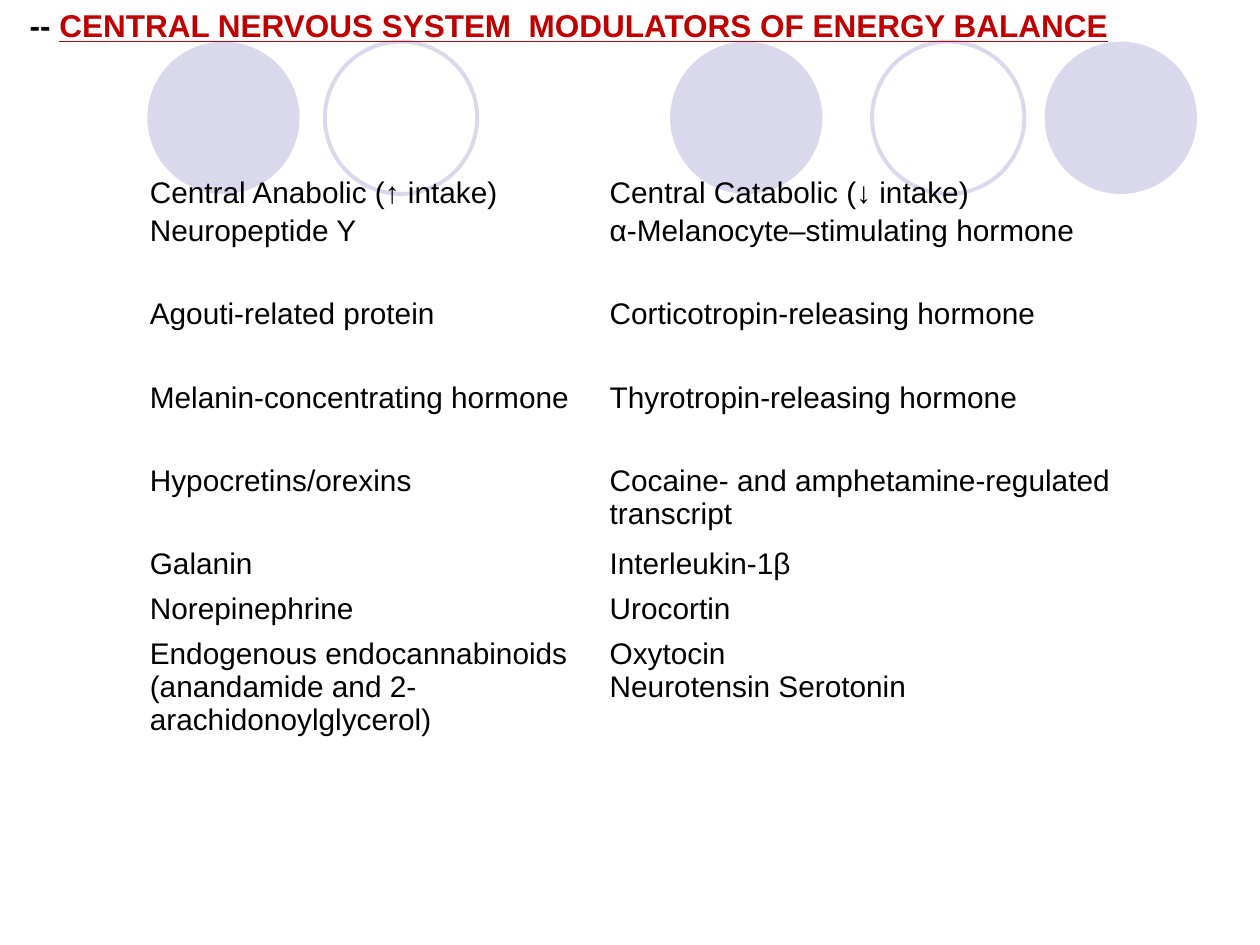
from dataclasses import dataclass

from pptx import Presentation
from pptx.dml.color import RGBColor
from pptx.enum.shapes import MSO_SHAPE
from pptx.enum.text import MSO_ANCHOR
from pptx.oxml.ns import qn
from pptx.util import Cm, Pt

ELLIPSE = MSO_SHAPE.OVAL
TOP, MIDDLE, BOTTOM = MSO_ANCHOR.TOP, MSO_ANCHOR.MIDDLE, MSO_ANCHOR.BOTTOM
NO_STYLE_NO_GRID = "{2D5ABB26-0587-4C30-8999-92F81FD0307C}"


@dataclass(frozen=True)
class Theme:
    font: str = "Arial"
    text: RGBColor = RGBColor(0x00, 0x00, 0x00)
    heading: RGBColor = RGBColor(0xC0, 0x00, 0x00)
    circle: RGBColor = RGBColor(0xD9, 0xD8, 0xEC)
    heading_size: Pt = Pt(18)
    table_size: Pt = Pt(17)
    ring_width: Pt = Pt(2.25)


THEME = Theme()

CIRCLE_TOP, CIRCLE_SIZE = 0.84, 3.07
FILLED_CIRCLES = (2.97, 13.51, 21.06)
RINGS = (6.55, 17.58)

COLUMN_WIDTHS = (9.27, 10.38)
ROW_HEIGHTS = (1.68,) * 5 + (0.9,) * 2 + (3.28,)
MODULATORS = (
    ("Central Anabolic (↑ intake)", "Central Catabolic (↓ intake)"),
    ("Neuropeptide Y", "α-Melanocyte–stimulating hormone"),
    ("Agouti-related protein", "Corticotropin-releasing hormone"),
    ("Melanin-concentrating hormone", "Thyrotropin-releasing hormone"),
    ("Hypocretins/orexins", "Cocaine- and amphetamine-regulated transcript"),
    ("Galanin", "Interleukin-1β"),
    ("Norepinephrine", "Urocortin"),
    ("Endogenous endocannabinoids (anandamide and 2-arachidonoylglycerol)",
     "Oxytocin\nNeurotensin Serotonin"),
)


def add_run(paragraph, text, size, color=THEME.text, bold=False, underline=False):
    run = paragraph.add_run()
    run.text = text
    font = run.font
    font.name, font.size, font.bold, font.underline = THEME.font, size, bold, underline
    font.color.rgb = color


def add_circle(slide, left, filled):
    """Add a solid disc, or a ring when not filled."""
    circle = slide.shapes.add_shape(
        ELLIPSE, Cm(left), Cm(CIRCLE_TOP), Cm(CIRCLE_SIZE), Cm(CIRCLE_SIZE))
    circle.shadow.inherit = False
    if filled:
        circle.fill.solid()
        circle.fill.fore_color.rgb = THEME.circle
        circle.line.fill.background()
    else:
        circle.fill.background()
        circle.line.color.rgb = THEME.circle
        circle.line.width = THEME.ring_width


def fill_cell(cell, text, anchor):
    cell.fill.background()
    cell.vertical_anchor = anchor
    cell.margin_left = cell.margin_right = cell.margin_top = cell.margin_bottom = Cm(0.05)
    frame = cell.text_frame
    for index, line in enumerate(text.split("\n")):
        paragraph = frame.add_paragraph() if index else frame.paragraphs[0]
        add_run(paragraph, line, THEME.table_size)


def add_modulator_table(slide):
    table = slide.shapes.add_table(
        len(MODULATORS), len(COLUMN_WIDTHS), Cm(2.97), Cm(2.59),
        Cm(sum(COLUMN_WIDTHS)), Cm(sum(ROW_HEIGHTS))).table
    table.first_row = table.horz_banding = False
    table._tbl.tblPr.find(qn("a:tableStyleId")).text = NO_STYLE_NO_GRID
    for column, width in zip(table.columns, COLUMN_WIDTHS):
        column.width = Cm(width)
    for index, (row, height, texts) in enumerate(zip(table.rows, ROW_HEIGHTS, MODULATORS)):
        row.height = Cm(height)
        for cell, text in zip(row.cells, texts):
            fill_cell(cell, text, TOP if index else BOTTOM)


def add_heading(slide):
    frame = slide.shapes.add_textbox(Cm(0), Cm(0), Cm(23.01), Cm(1.02)).text_frame
    frame.word_wrap = True
    frame.vertical_anchor = MIDDLE
    frame.margin_left = Cm(0.6)
    paragraph = frame.paragraphs[0]
    add_run(paragraph, "-- ", THEME.heading_size, bold=True)
    add_run(paragraph, "CENTRAL NERVOUS SYSTEM  MODULATORS OF ENERGY BALANCE",
            THEME.heading_size, THEME.heading, bold=True, underline=True)


def main():
    presentation = Presentation()
    presentation.slide_width, presentation.slide_height = Cm(25.4), Cm(19.05)
    slide = presentation.slides.add_slide(presentation.slide_layouts[6])
    for left in FILLED_CIRCLES:
        add_circle(slide, left, filled=True)
    for left in RINGS:
        add_circle(slide, left, filled=False)
    add_modulator_table(slide)
    add_heading(slide)
    presentation.save("out.pptx")


if __name__ == "__main__":
    main()
